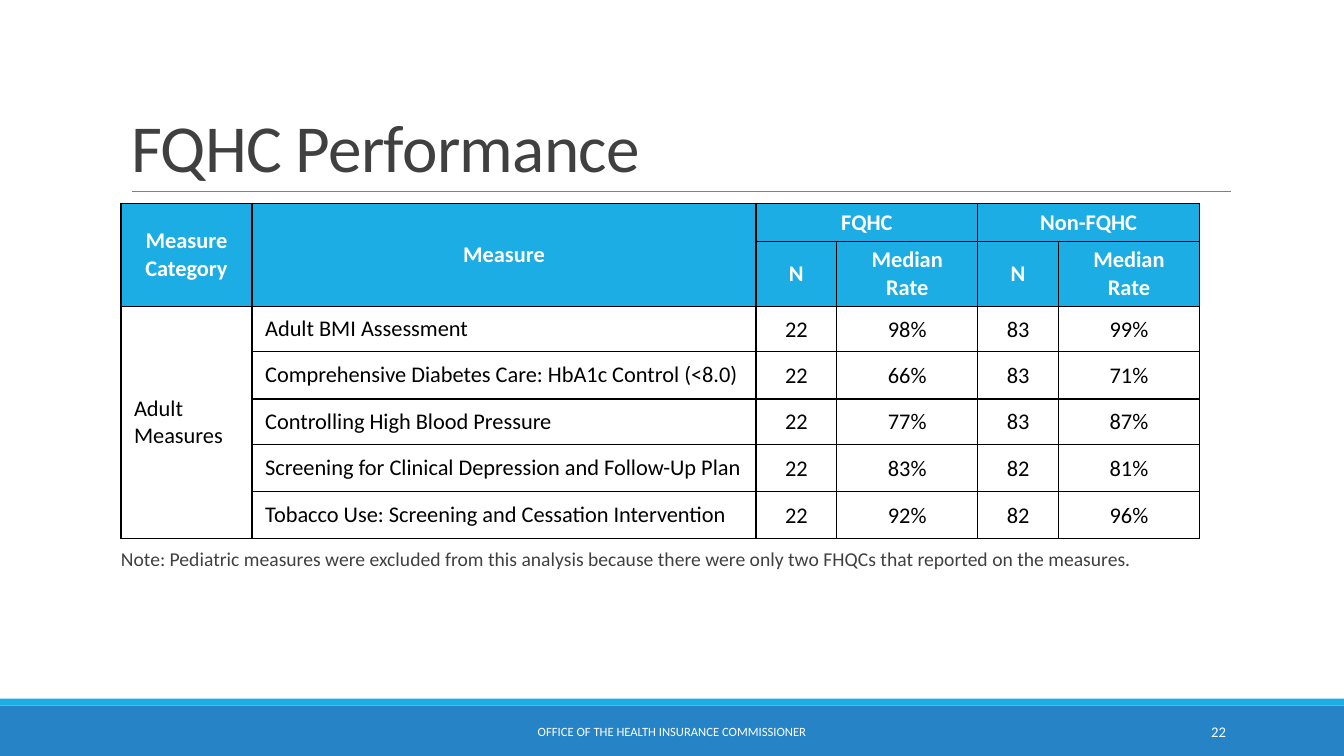
"""Build the FQHC Performance slide with its table of median rates."""
import pptx
import pptx.util
import pptx.dml.color
import pptx.enum.text
import pptx.enum.shapes
import pptx.oxml
import lxml.etree

Pt = pptx.util.Pt
Align = pptx.enum.text.PP_ALIGN
Anchor = pptx.enum.text.MSO_ANCHOR

TITLE = "FQHC Performance"
NOTE = ("Note: Pediatric measures were excluded from this analysis because "
        "there were only two FHQCs that reported on the measures.")
FOOTER = "OFFICE OF THE HEALTH INSURANCE COMMISSIONER"
NUMBER = "22"
HEAD = [
    ["Measure Category", "Measure", "FQHC", "", "Non-FQHC", ""],
    ["", "", "N", "Median Rate", "N", "Median Rate"],
]
RATES = [
    ["Adult Measures", "Adult BMI Assessment", "22", "98%", "83", "99%"],
    ["", "Comprehensive Diabetes Care: HbA1c Control (<8.0)",
     "22", "66%", "83", "71%"],
    ["", "Controlling High Blood Pressure", "22", "77%", "83", "87%"],
    ["", "Screening for Clinical Depression and Follow-Up Plan",
     "22", "83%", "82", "81%"],
    ["", "Tobacco Use: Screening and Cessation Intervention",
     "22", "92%", "82", "96%"],
]
MERGES = [((0, 0), (1, 0)), ((0, 1), (1, 1)), ((0, 2), (0, 3)),
          ((0, 4), (0, 5)), ((2, 0), (6, 0))]
COLS = [93.6, 360, 57.6, 100.8, 57.6, 100.8]
ROWS = [27, 46.4, 32.4, 33.8, 32.4, 33.8, 33.8]
WIDE, TALL, LEFT = 960, 540, 86.4
CYAN, BLUE, WHITE, BLACK, GREY = "1CADE4", "2683C6", "FFFFFF", "000000", "404040"
SIDES = ("left", "top", "right", "bottom")
ROOMY = (9.4, 3.6, 9.4, 3.6)
TIGHT = (0.7, 0.7, 0.7, 0)


def color(code):
    """Turn a hex string into a colour."""
    return pptx.dml.color.RGBColor.from_string(code)


def apply(thing, **form):
    """Set each given attribute."""
    for key, value in form.items():
        setattr(thing, key, value)


def inset(thing, sizes):
    """Set the four margins of a frame or cell."""
    apply(thing, **{f"margin_{s}": Pt(n) for s, n in zip(SIDES, sizes)})


def write(frame, text, size, tint, bold=False, **form):
    """Put one formatted paragraph in a frame and return its run."""
    para = frame.paragraphs[0]
    run = para.add_run()
    run.text = text
    apply(para, **form)
    apply(run.font, name="Calibri", size=Pt(size), bold=bold)
    run.font.color.rgb = color(tint)
    return run


def label(slide, box, text, size, tint, anchor, sizes, **form):
    """Add a wrapping text box."""
    frame = slide.shapes.add_textbox(*map(Pt, box)).text_frame
    apply(frame, word_wrap=True, vertical_anchor=anchor)
    inset(frame, sizes)
    write(frame, text, size, tint, **form)


def bar(slide, top, high, tint):
    """Add a full-width band."""
    kind = pptx.enum.shapes.MSO_SHAPE.RECTANGLE
    band = slide.shapes.add_shape(kind, 0, Pt(top), Pt(WIDE), Pt(high))
    band.shadow.inherit = False
    band.fill.solid()
    band.fill.fore_color.rgb = color(tint)
    band.line.fill.background()


def border(cell):
    """Draw a black line on all four sides of a cell."""
    props = cell._tc.get_or_add_tcPr()
    for spot, side in enumerate("LRTB"):
        line = pptx.oxml.parse_xml(
            f'<a:ln{side} xmlns:a="http://schemas.openxmlformats.org/'
            f'drawingml/2006/main" w="12700"><a:solidFill>'
            f'<a:srgbClr val="{BLACK}"/></a:solidFill></a:ln{side}>')
        props.insert(spot, line)


def grid(slide):
    """Add the table."""
    cells = HEAD + RATES
    table = slide.shapes.add_table(
        len(ROWS), len(COLS), Pt(LEFT), Pt(145.4),
        Pt(sum(COLS)), Pt(sum(ROWS))).table
    apply(table, first_row=False, horz_banding=False)
    for col, wide in zip(table.columns, COLS):
        col.width = Pt(wide)
    for row, high in zip(table.rows, ROWS):
        row.height = Pt(high)
    for r, line in enumerate(cells):
        head = r < len(HEAD)
        for c, text in enumerate(line):
            cell = table.cell(r, c)
            cell.vertical_anchor = Anchor.MIDDLE
            inset(cell, ROOMY if head or c < 2 else TIGHT)
            cell.fill.solid()
            cell.fill.fore_color.rgb = color(CYAN if head else WHITE)
            border(cell)
            if text:
                side = Align.CENTER if head or c > 1 else Align.LEFT
                write(cell.text_frame, text, 16, WHITE if head else BLACK,
                      bold=head, alignment=side)
    for first, last in MERGES:
        table.cell(*first).merge(table.cell(*last))


def main():
    """Make and save the slide."""
    deck = pptx.Presentation()
    apply(deck, slide_width=Pt(WIDE), slide_height=Pt(TALL))
    slide = deck.slides.add_slide(deck.slide_layouts[5])
    bar(slide, 504, 36, BLUE)
    bar(slide, 499, 5, CYAN)
    rule = slide.shapes.add_connector(
        pptx.enum.shapes.MSO_CONNECTOR.STRAIGHT,
        Pt(94.3), Pt(136.8), Pt(879), Pt(136.8))
    rule.line.width = Pt(0.5)
    rule.line.color.rgb = color("808080")
    lxml.etree.SubElement(rule._element.spPr, pptx.oxml.ns.qn("a:effectLst"))

    title = slide.shapes.title
    apply(title, left=Pt(LEFT), top=Pt(22.3), width=Pt(792), height=Pt(114.5))
    apply(title.text_frame, word_wrap=True, vertical_anchor=Anchor.BOTTOM,
          auto_size=pptx.enum.text.MSO_AUTO_SIZE.NONE)
    run = write(title.text_frame, TITLE, 48, GREY,
                alignment=Align.LEFT, line_spacing=0.85)
    run._r.get_or_add_rPr().set("spc", "-50")

    plain = (7.2, 3.6, 7.2, 3.6)
    label(slide, (290.2, 508.3, 379.4, 28.8), FOOTER, 9, WHITE,
          Anchor.MIDDLE, plain, alignment=Align.CENTER)
    label(slide, (779.8, 508.3, 103, 28.8), NUMBER, 10.5, WHITE,
          Anchor.MIDDLE, plain, alignment=Align.RIGHT)
    grid(slide)
    label(slide, (LEFT, 388.8, 792, 23.8), NOTE, 14, GREY,
          Anchor.TOP, (0, 3.6, 0, 3.6), line_spacing=0.9,
          space_before=Pt(12), space_after=Pt(2))
    deck.save("out.pptx")


if __name__ == "__main__":
    main()
